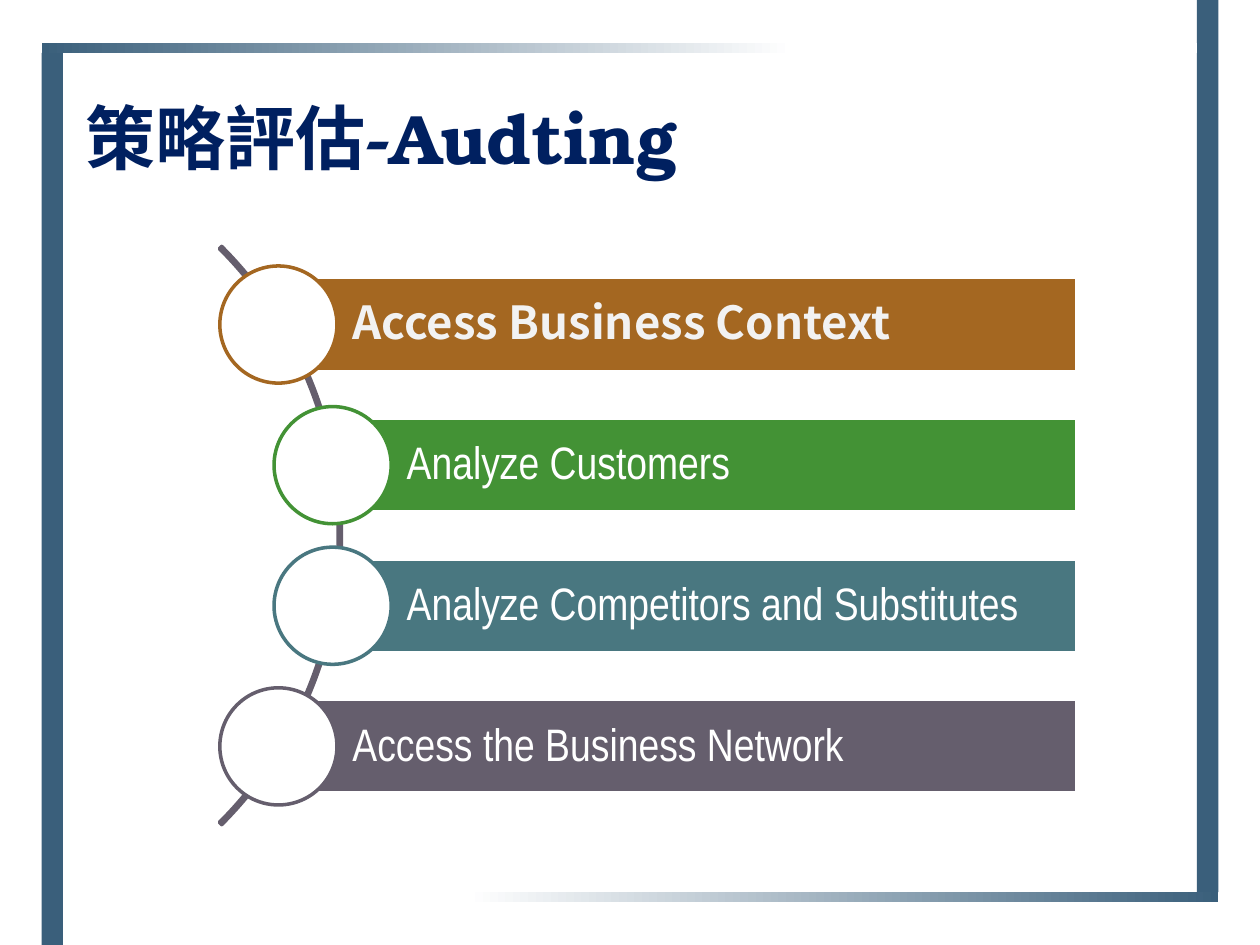
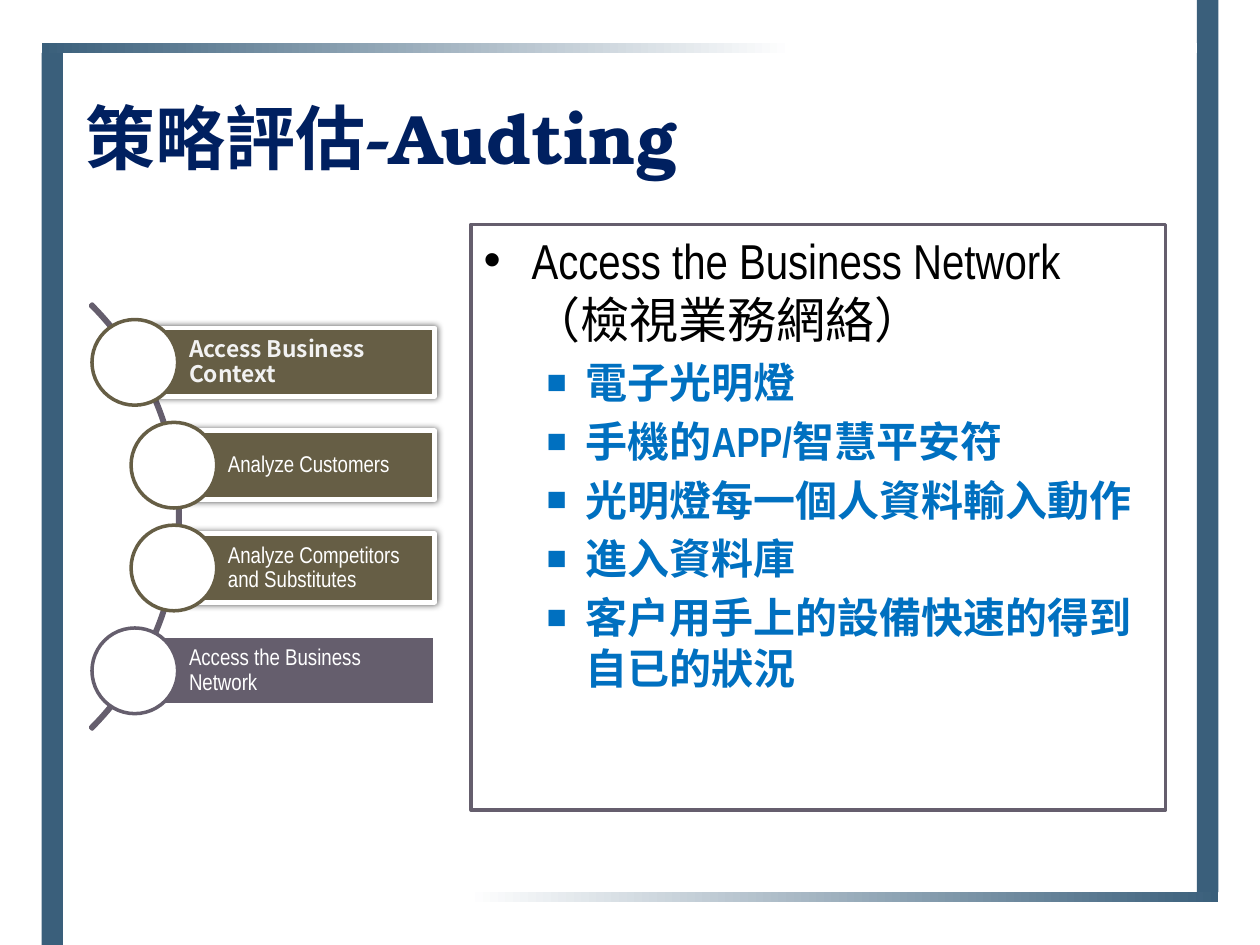
"""Builds two strategy-audit slides that share a frame, a title and a step timeline."""
from lxml import etree
from pptx import Presentation
from pptx.dml.color import RGBColor
from pptx.enum.shapes import MSO_SHAPE
from pptx.enum.text import MSO_ANCHOR, PP_ALIGN
from pptx.oxml.ns import qn
from pptx.util import Inches, Pt

RECT, OVAL, ARC = MSO_SHAPE.RECTANGLE, MSO_SHAPE.OVAL, MSO_SHAPE.BLOCK_ARC
TOP, MIDDLE, BOTTOM = MSO_ANCHOR.TOP, MSO_ANCHOR.MIDDLE, MSO_ANCHOR.BOTTOM
LEFT = PP_ALIGN.LEFT

WHITE = RGBColor(0xFF, 0xFF, 0xFF)
PALE = RGBColor(0xF2, 0xF2, 0xF2)
BLACK = RGBColor(0, 0, 0)
STEEL = RGBColor(0x3A, 0x5F, 0x7B)
NAVY = RGBColor(0x00, 0x20, 0x60)
BLUE = RGBColor(0x00, 0x70, 0xC0)
OCHRE = RGBColor(0xA4, 0x67, 0x21)
GREEN = RGBColor(0x43, 0x92, 0x35)
TEAL = RGBColor(0x49, 0x77, 0x80)
PLUM = RGBColor(0x65, 0x5E, 0x6D)
OLIVE = RGBColor(0x66, 0x5E, 0x45)

SERIF, NARROW, CJK = "TeX Gyre Bonum", "Arial Narrow", "Noto Sans CJK TC"

TITLE = "策略評估-Audting"
STEPS = [
    "Access Business Context",
    "Analyze Customers",
    "Analyze Competitors and Substitutes",
    "Access the Business Network",
]
OVERVIEW = dict(
    colors=[OCHRE, GREEN, TEAL, PLUM], glowing=0, size=26, middle=4.25, circle=0.93,
    outer=2.21, inner=2.64, right=8.55, arc=6.49, arc_right=2.71, pad=0.07,
)
SIDEBAR = dict(
    colors=[OLIVE, OLIVE, OLIVE, PLUM], glowing=3, size=13, middle=4.1, circle=0.68,
    outer=1.07, inner=1.38, right=3.45, arc=4.77, arc_right=1.43, pad=0.04,
)
NETWORK_HEADING = "Access the Business Network（檢視業務網絡）"
NETWORK_POINTS = [
    "電子光明燈",
    "手機的APP/智慧平安符",
    "光明燈每一個人資料輸入動作",
    "進入資料庫",
    "客戶用手上的設備快速的得到自已的狀況",
]


def add_part(slide, kind, box, fill=None, line=None, width=2):
    part = slide.shapes.add_shape(kind, *(Inches(length) for length in box))
    part.shadow.inherit = False
    if fill is None:
        part.fill.background()
    else:
        part.fill.solid()
        part.fill.fore_color.rgb = fill
    if line is None:
        part.line.fill.background()
    else:
        part.line.color.rgb = line
        part.line.width = Pt(width)
    return part


def set_frame(part, anchor, insets=(0.1, 0.05, 0.1, 0.05)):
    frame = part.text_frame
    frame.word_wrap = True
    frame.vertical_anchor = anchor
    (frame.margin_left, frame.margin_top,
     frame.margin_right, frame.margin_bottom) = map(Inches, insets)
    return frame


def write(paragraph, text, size, font, color, bold=False):
    paragraph.alignment = LEFT
    run = paragraph.add_run()
    run.text = text
    run.font.size = Pt(size)
    run.font.name = font
    run.font.bold = bold
    run.font.color.rgb = color
    etree.SubElement(run.font._element, qn("a:ea"), typeface=CJK)


def set_bullet(paragraph, mark, indent, hang, percent):
    props = paragraph._p.get_or_add_pPr()
    props.set("marL", str(Inches(indent)))
    props.set("indent", str(-Inches(hang)))
    etree.SubElement(props, qn("a:buSzPct"), val=str(percent * 1000))
    etree.SubElement(props, qn("a:buFont"), typeface="Arial")
    etree.SubElement(props, qn("a:buChar"), char=mark)


def add_glow(part):
    effects = part._element.spPr.find(qn("a:effectLst"))
    shadow = etree.SubElement(effects, qn("a:outerShdw"), blurRad=str(Pt(4)),
                              dist="0", dir="0", algn="ctr", rotWithShape="0")
    color = etree.SubElement(shadow, qn("a:srgbClr"), val=str(BLACK))
    etree.SubElement(color, qn("a:alpha"), val="64000")


def add_framed_slide(deck):
    slide = deck.slides.add_slide(deck.slide_layouts[6])
    for left, top in [(9.5, 0), (0.33, 0.42)]:
        add_part(slide, RECT, (left, top, 0.17, 7.08), STEEL)
    for left, top, angle in [(0.5, 7.08, 180), (0.33, 0.34, 0)]:
        band = add_part(slide, RECT, (left, top, 9.17, 0.08))
        band.fill.gradient()
        band.fill.gradient_angle = angle
        for stop, color, position in zip(band.fill.gradient_stops, (STEEL, WHITE), (0, 0.65)):
            stop.color.rgb = color
            stop.position = position
    title = slide.shapes.add_textbox(*map(Inches, (0.58, 0.5, 8.83, 0.97)))
    write(set_frame(title, BOTTOM).paragraphs[0], TITLE, 40, SERIF, NAVY, True)
    return slide


def add_timeline(slide, colors, glowing, size, middle, circle, outer, inner, right,
                 arc, arc_right, pad):
    height, pitch = 0.8 * circle, 1.2 * circle
    curve = add_part(slide, ARC, (arc_right - arc, middle - arc / 2, arc, arc), line=PLUM)
    for index, value in enumerate((189, 27, 0.004)):
        curve.adjustments[index] = value
    for row, (step, color) in enumerate(zip(STEPS, colors)):
        first = row == 0
        left = outer if row in (0, len(STEPS) - 1) else inner
        center = middle + (row - (len(STEPS) - 1) / 2) * pitch
        glows = row < glowing
        bar = add_part(slide, RECT, (left, center - height / 2, right - left, height),
                       color, WHITE, 2.75 if glows else 2)
        if glows:
            add_glow(bar)
        label = set_frame(bar, MIDDLE, (0.79 * height, pad, pad, pad)).paragraphs[0]
        label.line_spacing = 0.9
        write(label, step, size, CJK if first else NARROW, PALE if first else WHITE, first)
        add_part(slide, OVAL, (left - circle / 2, center - circle / 2, circle, circle),
                 WHITE, color)


def add_network_panel(slide):
    panel = add_part(slide, RECT, (3.74, 1.78, 5.51, 4.65), WHITE, PLUM)
    frame = set_frame(panel, TOP)
    heading = frame.paragraphs[0]
    set_bullet(heading, "•", 0.38, 0.38, 100)
    write(heading, NETWORK_HEADING, 28, NARROW, BLACK)
    for text in NETWORK_POINTS:
        point = frame.add_paragraph()
        set_bullet(point, "■", 0.81, 0.31, 80)
        point.space_before = Pt(4.8)
        write(point, text, 24, NARROW, BLUE, True)


def main():
    deck = Presentation()
    deck.slide_width, deck.slide_height = Inches(10), Inches(7.5)
    add_timeline(add_framed_slide(deck), **OVERVIEW)
    network = add_framed_slide(deck)
    add_network_panel(network)
    add_timeline(network, **SIDEBAR)
    deck.save("out.pptx")


if __name__ == "__main__":
    main()
